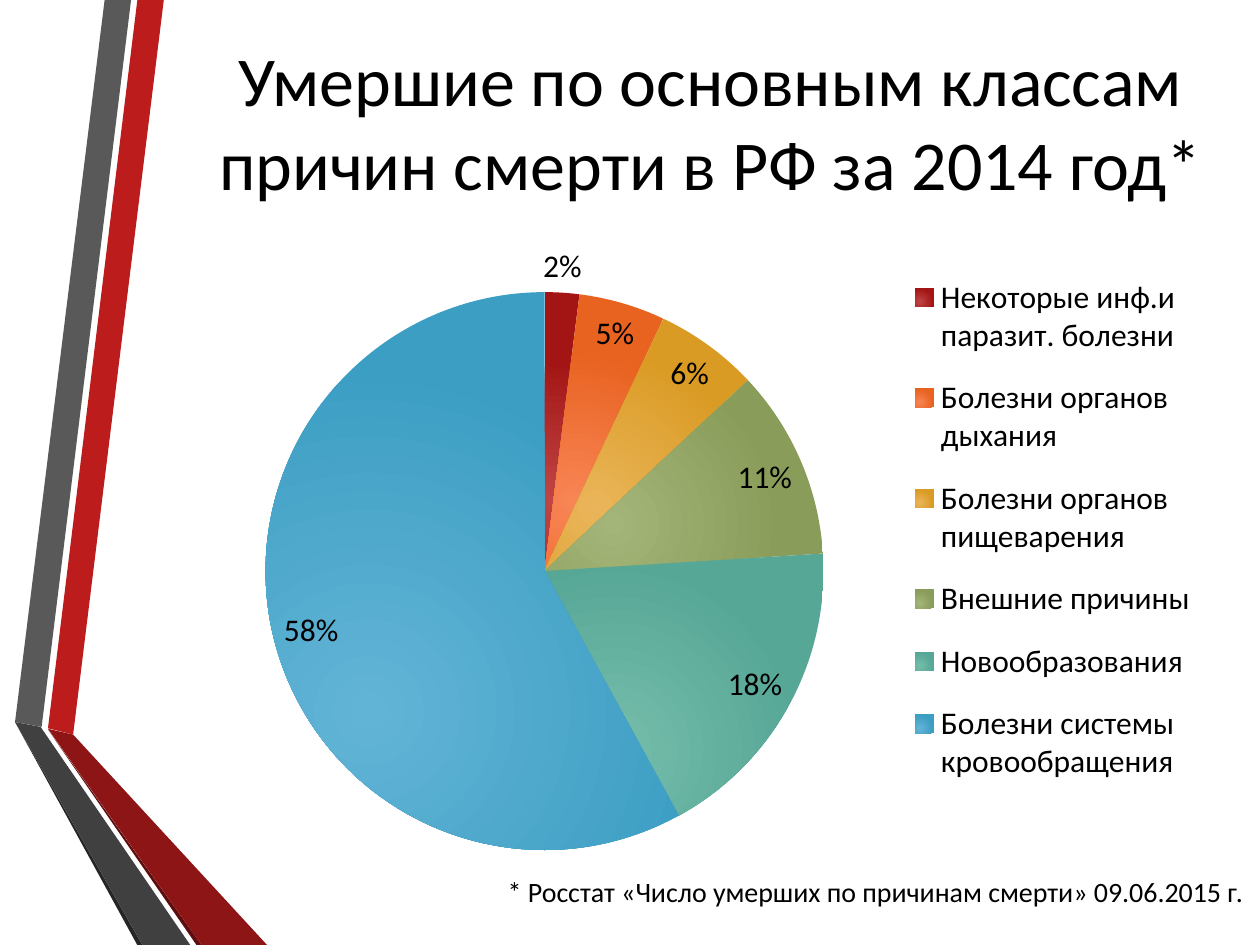
from lxml import etree
from pptx import Presentation
from pptx import util as u
from pptx.chart.data import CategoryChartData
from pptx.dml.color import RGBColor
from pptx.enum import chart as ch, text as tx
from pptx.oxml import parse_xml
from pptx.oxml.ns import nsdecls, qn

BLACK = "000000"

# Corner points of the folded ribbons, back to front
RIBBONS = [
    ("BC1C1C", [(27.4, 416.2), (41.8, 419.8), (93.6, 0), (78.5, 0)]),
    ("595959", [(74.9, 0), (59.8, 0), (8.6, 412.6), (23.8, 415.4)]),
    ("262626", [(8.6, 412.6), (78.5, 540), (81.4, 540)]),
    ("5E0E0E", [(27.4, 416.9), (112.3, 540), (115.2, 540)]),
    ("8D1515", [(27.4, 416.5), (115.2, 540), (152.6, 540), (41.8, 419.8)]),
    ("404040", [(108.7, 540), (23.2, 415.4), (8.6, 412.6), (81.4, 540)]),
]

# Cause, percent, inner colour, outer colour
CAUSES = [
    ("Некоторые инф.и паразит. болезни", 2, "C04545", "A31515"),
    ("Болезни органов дыхания", 5, "F88555", "E86220"),
    ("Болезни органов пищеварения", 6, "EAB55A", "DA9B24"),
    ("Внешние причины", 11, "A3B578", "8A9C5A"),
    ("Новообразования", 18, "75BDAB", "57A796"),
    ("Болезни системы кровообращения", 58, "62B4D6", "3C9EC3"),
]


def color(value):
    return RGBColor.from_string(value)


def set_font(font, size, fill=BLACK, name="Calibri"):
    font.size = u.Pt(size)
    font.name = name
    font.color.rgb = color(fill)


def write(box, text, *, size, align=tx.PP_ALIGN.CENTER, anchor=tx.MSO_ANCHOR.TOP):
    frame = box.text_frame
    frame.word_wrap = True
    frame.vertical_anchor = anchor
    para = frame.paragraphs[0]
    para.alignment = align
    span = para.add_run()
    span.text = text
    set_font(span.font, size)


def fill_radial(fill, inner, outer):
    fill.gradient()
    for stop, value in zip(fill.gradient_stops, (inner, outer)):
        stop.color.rgb = color(value)
    linear = fill._fill._gradFill.find(qn("a:lin"))
    linear.getparent().replace(linear, parse_xml(
        f'<a:path {nsdecls("a")} path="circle">'
        '<a:fillToRect l="25000" t="75000" r="75000" b="25000"/></a:path>'))


def manual_layout(x, y, w, h, inner=False):
    target = '<c:layoutTarget val="inner"/>' if inner else ""
    sizes = "".join(f'<c:{tag} val="{value}"/>'
                    for tag, value in zip("xywh", (x, y, w, h)))
    return parse_xml(
        f'<c:layout {nsdecls("c")}><c:manualLayout>{target}'
        f'<c:xMode val="edge"/><c:yMode val="edge"/>{sizes}'
        '</c:manualLayout></c:layout>')


def place_layout(parent, layout, after=None):
    for old in parent.findall(qn("c:layout")):
        parent.remove(old)
    if after is None:
        parent.insert(0, layout)
    else:
        parent.find(qn(after)).addnext(layout)


class SlideBuilder:
    def __init__(self, deck):
        self.page = deck.slides.add_slide(deck.slide_layouts[5])

    def ribbon(self, fill, points):
        corners = [(u.Pt(x), u.Pt(y)) for x, y in points]
        builder = self.page.shapes.build_freeform(*corners[0], scale=1.0)
        builder.add_line_segments(corners[1:], close=True)
        shape = builder.convert_to_shape()
        shape.shadow.inherit = False
        shape.fill.solid()
        shape.fill.fore_color.rgb = color(fill)
        shape.line.fill.background()

    def title(self, text, left, top, width, height):
        box = self.page.shapes.title
        box.left, box.top = u.Pt(left), u.Pt(top)
        box.width, box.height = u.Pt(width), u.Pt(height)
        write(box, text, size=40, anchor=tx.MSO_ANCHOR.MIDDLE)

    def note(self, text, left, top, width, height):
        box = self.page.shapes.add_textbox(*map(u.Pt, (left, top, width, height)))
        write(box, text, size=16)

    def pie(self, rows, left, top, width, height):
        data = CategoryChartData()
        data.categories = [row[0] for row in rows]
        data.add_series("Series 1", [row[1] for row in rows])
        chart = self.page.shapes.add_chart(
            ch.XL_CHART_TYPE.PIE, *map(u.Pt, (left, top, width, height)), data).chart
        chart.has_title = False
        set_font(chart.font, 18)

        # Slices and percent labels
        plot = chart.plots[0]
        plot.vary_by_categories = True
        for index, (_, _, inner, outer) in enumerate(rows):
            point = plot.series[0].points[index]
            fill_radial(point.format.fill, inner, outer)
            point.format.line.fill.background()
        plot.has_data_labels = True
        labels = plot.data_labels
        labels.show_percentage = True
        labels.show_value = False
        labels.number_format = "0%"
        labels.number_format_is_linked = False
        labels.position = ch.XL_LABEL_POSITION.BEST_FIT
        set_font(labels.font, 18)

        # Legend and plot places as shares of the chart
        chart.has_legend = True
        legend = chart.legend
        legend.position = ch.XL_LEGEND_POSITION.RIGHT
        legend.include_in_layout = False
        set_font(legend.font, 18)
        place_layout(legend._element, manual_layout(0.68, 0.04, 0.31, 0.86),
                     after="c:legendPos")
        area = chart._chartSpace.chart.plotArea
        place_layout(area, manual_layout(0.09, 0.1, 0.53, 0.87, inner=True))


def main():
    deck = Presentation()
    deck.slide_width, deck.slide_height = u.Pt(720), u.Pt(540)
    slide = SlideBuilder(deck)
    for fill, points in RIBBONS:
        slide.ribbon(fill, points)
    slide.title("Умершие по основным классам причин смерти в РФ за 2014 год*",
                110, 0, 592, 138)
    slide.pie(CAUSES, 96.5, 130.3, 604.8, 366.5)
    slide.note("* Росстат «Число умерших по причинам смерти» 09.06.2015 г.",
               280.8, 496, 439.2, 26.6)
    deck.save("out.pptx")


if __name__ == "__main__":
    main()
